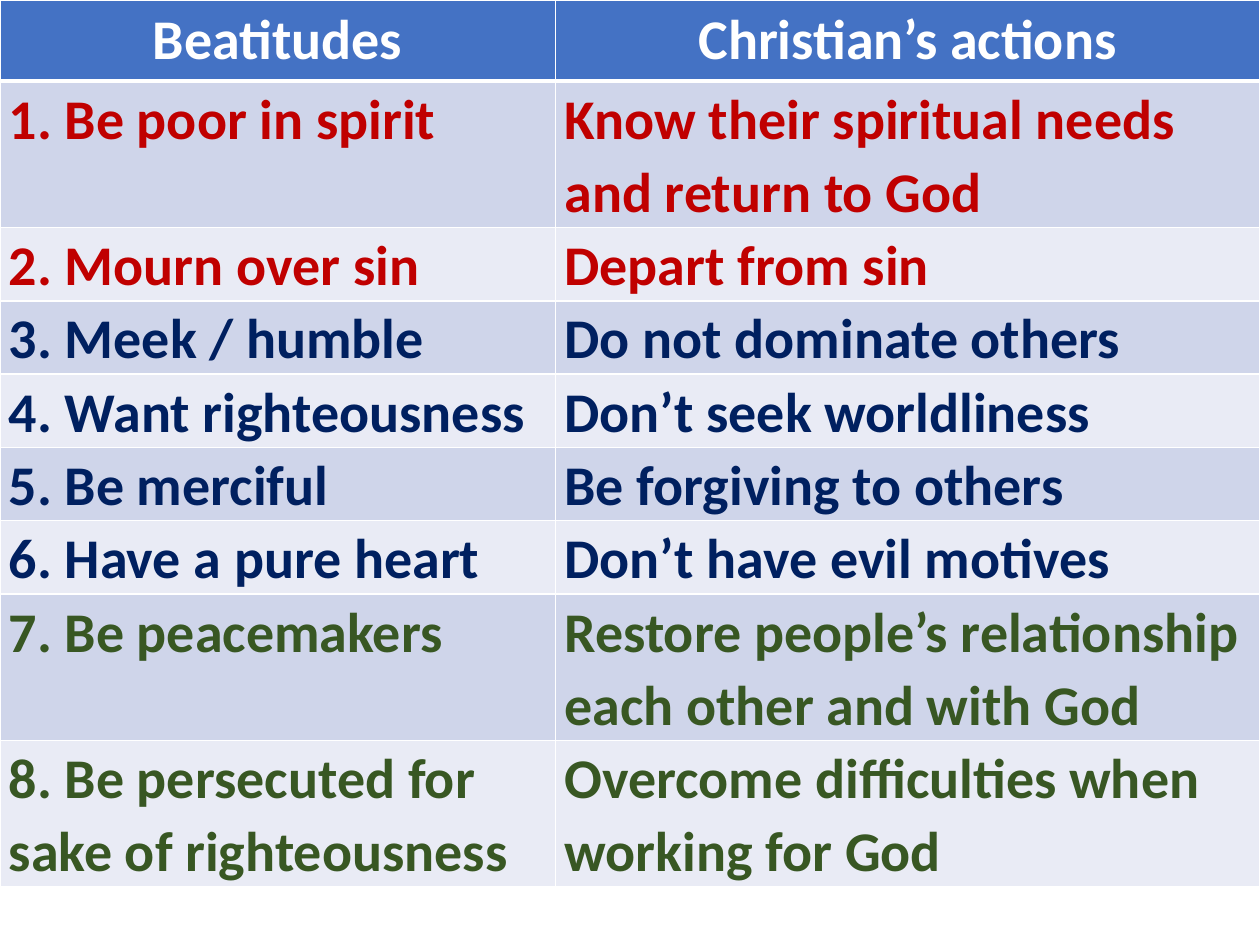
import pptx
import pptx.util
from dataclasses import dataclass
from lxml import etree
from pptx.dml.color import RGBColor
from pptx.enum.text import PP_ALIGN
from pptx.oxml.ns import qn
from pptx.util import Inches, Pt


@dataclass(frozen=True)
class Theme:
    font: str = "Calibri"
    size: int = 32
    header: str = "4472C4"
    odd_row: str = "CFD5EA"
    even_row: str = "E9EBF5"
    white: str = "FFFFFF"
    red: str = "C00000"
    navy: str = "002060"
    green: str = "385723"


theme = Theme()

# left text, right text, text colour, row height in inches
rows = [
    ("Beatitudes", "Christian’s actions", theme.white, 0.63),
    ("1. Be poor in spirit", "Know their spiritual needs and return to God", theme.red, 1.12),
    ("2. Mourn over sin", "Depart from sin", theme.red, 0.57),
    ("3. Meek / humble", "Do not dominate others", theme.navy, 0.57),
    ("4. Want righteousness", "Don’t seek worldliness", theme.navy, 0.57),
    ("5. Be merciful", "Be forgiving to others", theme.navy, 0.57),
    ("6. Have a pure heart", "Don’t have evil motives", theme.navy, 0.58),
    ("7. Be peacemakers", "Restore people’s relationship each other and with God", theme.green, 1.12),
    ("8. Be persecuted for sake of righteousness", "Overcome difficulties when working for God",
     theme.green, 1.12),
]
column_widths = [4.41, 5.59]


def add_border(cell, side, points):
    """Draw one white cell edge; side is L, R, T or B. Call before filling the cell."""
    properties = cell._tc.get_or_add_tcPr()
    line = etree.SubElement(properties, qn(f"a:ln{side}"), w=str(Pt(points)))
    fill = etree.SubElement(line, qn("a:solidFill"))
    etree.SubElement(fill, qn("a:srgbClr"), val=theme.white)


presentation = pptx.Presentation()
presentation.slide_width = Inches(10)
presentation.slide_height = Inches(7.5)
slide = presentation.slides.add_slide(presentation.slide_layouts[6])

table_height = sum(row[-1] for row in rows)
table = slide.shapes.add_table(
    len(rows), len(column_widths), 0, 0, Inches(10), Inches(table_height)
).table
for column, width in zip(table.columns, column_widths):
    column.width = Inches(width)

for row_index, (beatitude, action, text_color, height) in enumerate(rows):
    table.rows[row_index].height = Inches(height)
    is_header = row_index == 0
    if is_header:
        row_color = theme.header
    else:
        row_color = theme.odd_row if row_index % 2 else theme.even_row

    for column_index, text in enumerate((beatitude, action)):
        cell = table.cell(row_index, column_index)
        add_border(cell, "L", 1)
        add_border(cell, "R", 1)
        add_border(cell, "T", 3 if row_index == 1 else 1)
        add_border(cell, "B", 3 if is_header else 1)
        cell.fill.solid()
        cell.fill.fore_color.rgb = RGBColor.from_string(row_color)

        cell.text = text
        paragraph = cell.text_frame.paragraphs[0]
        paragraph.font.name = theme.font
        paragraph.font.size = Pt(theme.size)
        paragraph.font.bold = True
        paragraph.font.color.rgb = RGBColor.from_string(text_color)
        if is_header:
            paragraph.alignment = PP_ALIGN.CENTER
        else:
            paragraph.line_spacing = 1.07
            cell.margin_left = cell.margin_right = Inches(0.07)
            cell.margin_top = cell.margin_bottom = 0

presentation.save("out.pptx")
